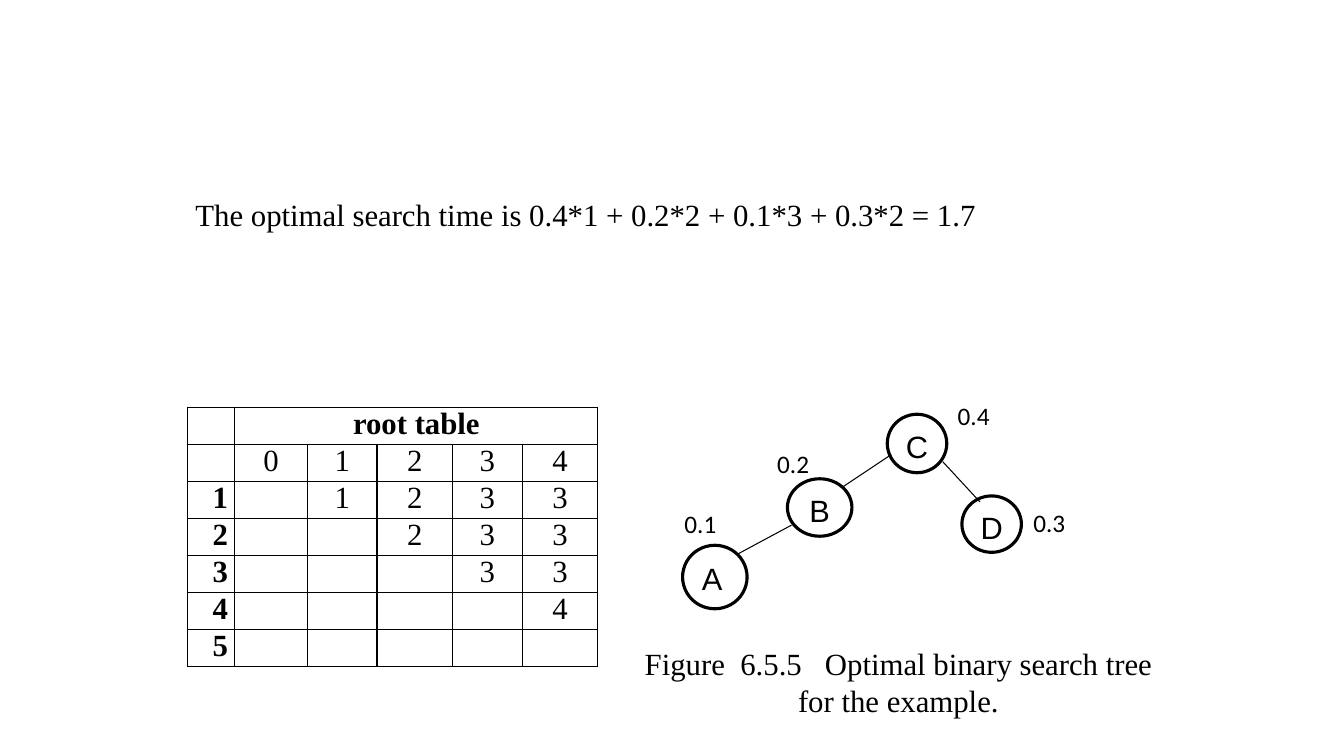
from dataclasses import dataclass

from lxml import etree
from pptx import Presentation
from pptx import util as u
from pptx.dml.color import RGBColor
from pptx.enum import shapes, text
from pptx.oxml import ns

SCALE = 9144
LEFT, CENTER, RIGHT = text.PP_ALIGN.LEFT, text.PP_ALIGN.CENTER, text.PP_ALIGN.RIGHT


@dataclass(frozen=True)
class Theme:
    ink: str = "000000"
    paper: str = "FFFFFF"
    serif: str = "Times New Roman"
    sans: str = "Arial"
    label: str = "Calibri"
    body_size: int = 22
    label_size: int = 18
    node_line: float = 2.25
    edge_line: float = 0.75
    border: int = 1


def px(*lengths):
    return [u.Emu(round(length * SCALE)) for length in lengths]


def write(frame, words, *, font, size, color, bold=False, align=LEFT):
    para = frame.paragraphs[0]
    para.alignment = align
    span = para.add_run()
    span.text = words
    span.font.name = font
    span.font.size = u.Pt(size)
    span.font.bold = bold
    span.font.color.rgb = RGBColor.from_string(color)


class TreeSlide:
    def __init__(self, deck, theme):
        self.theme = theme
        self.page = deck.slides.add_slide(deck.slide_layouts[6])

    def text(self, words, left, top, width, height, *, font, size, align=LEFT):
        box = self.page.shapes.add_textbox(*px(left, top, width, height))
        box.text_frame.word_wrap = True
        box.text_frame.auto_size = text.MSO_AUTO_SIZE.SHAPE_TO_FIT_TEXT
        write(box.text_frame, words, font=font, size=size, color=self.theme.ink, align=align)

    def node(self, letter, left, top, width, height, align):
        theme = self.theme
        oval = self.page.shapes.add_shape(
            shapes.MSO_SHAPE.OVAL, *px(left, top, width, height))
        oval.shadow.inherit = False
        oval.fill.solid()
        oval.fill.fore_color.rgb = RGBColor.from_string(theme.paper)
        oval.line.color.rgb = RGBColor.from_string(theme.ink)
        oval.line.width = u.Pt(theme.node_line)
        oval.text_frame.vertical_anchor = text.MSO_ANCHOR.TOP
        write(oval.text_frame, letter, font=theme.sans, size=theme.body_size,
              color=theme.ink, align=align)

    def edge(self, *ends):
        line = self.page.shapes.add_connector(shapes.MSO_CONNECTOR.STRAIGHT, *px(*ends))
        line.line.color.rgb = RGBColor.from_string(self.theme.ink)
        line.line.width = u.Pt(self.theme.edge_line)
        etree.SubElement(line._element.spPr, ns.qn("a:effectLst"))

    def style_cell(self, cell):
        theme = self.theme
        cell.margin_left, cell.margin_right = px(7, 7)
        cell.margin_top = cell.margin_bottom = 0
        cell.fill.solid()
        cell.fill.fore_color.rgb = RGBColor.from_string(theme.paper)
        properties = cell._tc.get_or_add_tcPr()
        for index, side in enumerate(("lnL", "lnR", "lnT", "lnB")):
            border = etree.Element(ns.qn(f"a:{side}"), w=str(u.Pt(theme.border)))
            fill = etree.SubElement(border, ns.qn("a:solidFill"))
            etree.SubElement(fill, ns.qn("a:srgbClr"), val=theme.ink)
            properties.insert(index, border)

    def table(self, rows, widths, left, top, height):
        theme = self.theme
        grid = self.page.shapes.add_table(
            len(rows), len(widths), *px(left, top, sum(widths), height)).table
        grid.first_row = grid.horz_banding = False
        for column, width in zip(grid.columns, widths):
            column.width = px(width)[0]
        for row, values in enumerate(rows):
            grid.rows[row].height = px(height / len(rows))[0]
            for column, value in enumerate(values):
                cell = grid.cell(row, column)
                self.style_cell(cell)
                if value:
                    write(cell.text_frame, value, font=theme.serif, size=theme.body_size,
                          color=theme.ink, bold=row == 0 or column == 0,
                          align=CENTER if column else RIGHT)
        grid.cell(0, 1).merge(grid.cell(0, len(widths) - 1))


NODES = (
    ("A", 677, 541, 64, 63, LEFT),
    ("C", 880, 411, 59, 58, LEFT),
    ("B", 781, 475, 64, 57, CENTER),
    ("D", 954, 492, 59, 56, CENTER),
)
EDGES = ((884, 451, 836, 483), (935, 458, 972, 498), (785, 521, 731, 550))
PROBABILITIES = (("0.4", 940, 392), ("0.3", 1015, 498), ("0.2", 761, 440), ("0.1", 669, 499))
ROOT_ROWS = (
    ("", "root table", "", "", "", ""),
    ("", "0", "1", "2", "3", "4"),
    ("1", "", "1", "2", "3", "3"),
    ("2", "", "", "2", "3", "3"),
    ("3", "", "", "", "3", "3"),
    ("4", "", "", "", "", "4"),
    ("5", "", "", "", "", ""),
)
ROOT_WIDTHS = (47, 72, 69, 75, 69, 75)


def main():
    deck = Presentation()
    deck.slide_width, deck.slide_height = px(1333, 750)
    theme = Theme()
    slide = TreeSlide(deck, theme)
    for node in NODES:
        slide.node(*node)
    for edge in EDGES:
        slide.edge(*edge)
    slide.text("Figure  6.5.5   Optimal binary search tree for the example.",
               619, 635, 544, 84, font=theme.serif, size=theme.body_size, align=CENTER)
    slide.table(ROOT_ROWS, ROOT_WIDTHS, 186, 404, 257)
    for probability, left, top in PROBABILITIES:
        slide.text(probability, left, top, 59, 40, font=theme.label, size=theme.label_size)
    slide.text("The optimal search time is 0.4*1 + 0.2*2 + 0.1*3 + 0.3*2 = 1.7",
               184, 189, 949, 47, font=theme.serif, size=theme.body_size)
    deck.save("out.pptx")


if __name__ == "__main__":
    main()
